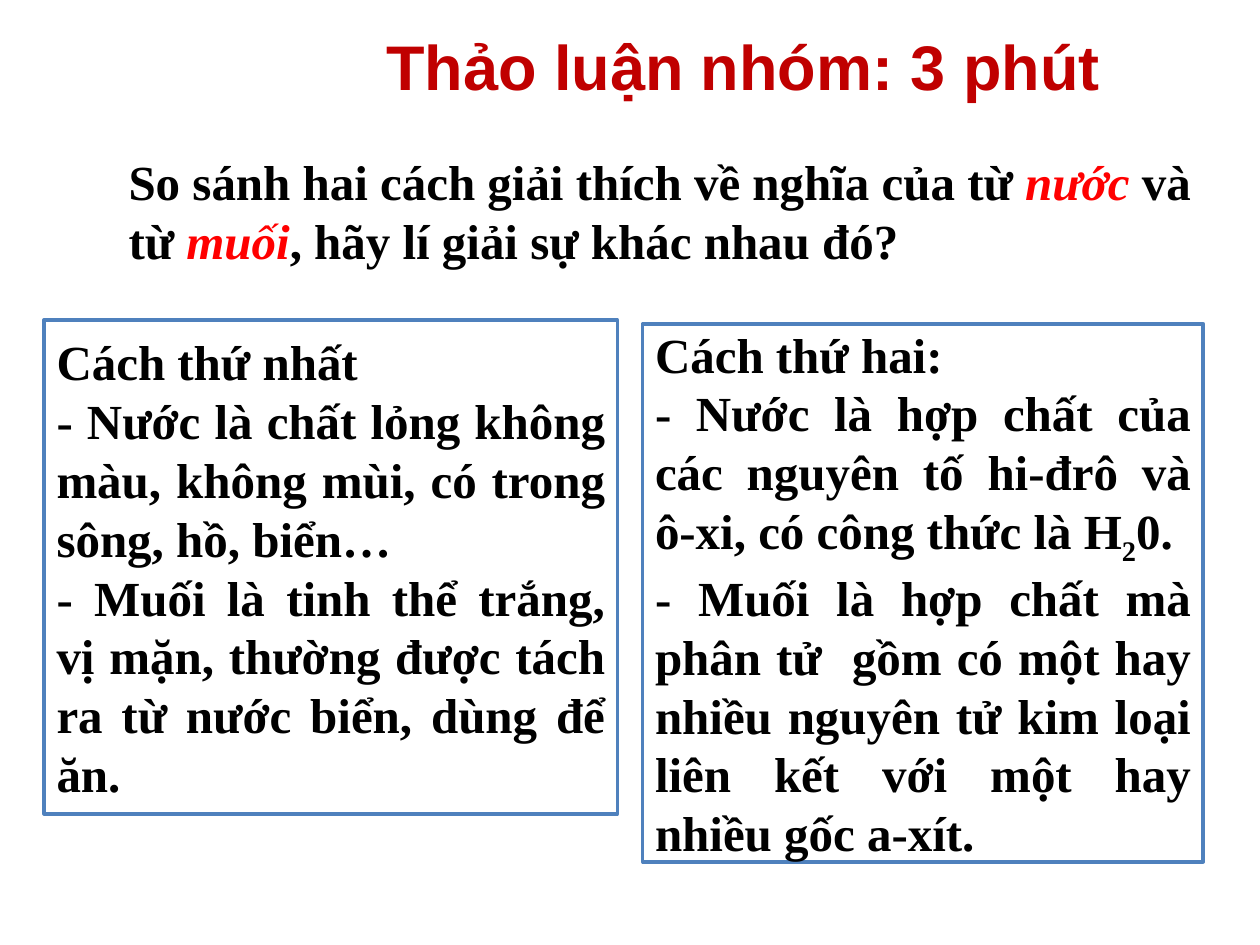
from lxml.etree import SubElement
from pptx import Presentation
from pptx.dml.color import RGBColor
from pptx.enum.shapes import MSO_SHAPE
from pptx.enum.text import MSO_ANCHOR, MSO_AUTO_SIZE, PP_ALIGN
from pptx.oxml.ns import qn
from pptx.util import Inches, Pt

BLACK = RGBColor(0x00, 0x00, 0x00)
WHITE = RGBColor(0xFF, 0xFF, 0xFF)
RED = RGBColor(0xFF, 0x00, 0x00)
DARK_RED = RGBColor(0xC0, 0x00, 0x00)
BLUE = RGBColor(0x4F, 0x81, 0xBD)
PALE_GREY = RGBColor(0xEA, 0xEA, 0xEA)

QUESTION = [
    ("So sánh hai cách giải thích về nghĩa của từ ", {}),
    ("nước", {"color": RED, "italic": True}),
    (" và từ ", {}),
    ("muối", {"color": RED, "italic": True}),
    (", hãy lí giải sự khác nhau đó?", {}),
]
FIRST_WAY = [
    [("Cách thứ nhất", {})],
    [("- Nước là chất lỏng không màu, không mùi, có trong sông, hồ, biển…", {})],
    [("- Muối là tinh thể trắng, vị mặn, thường được tách ra từ nước biển, "
      "dùng để ăn.", {})],
]
SECOND_WAY = [
    [("Cách thứ hai:", {})],
    [("- Nước là hợp chất của các nguyên tố hi-đrô và ô-xi, có công thức là H", {}),
     ("2", {"baseline": -25}),
     ("0.", {})],
    [("- Muối là hợp chất mà phân tử  gồm có một hay nhiều nguyên tử kim loại "
      "liên kết với một hay nhiều gốc a-xít.", {})],
]


def add_span(para, text, font="Times New Roman", size=28, color=BLACK,
             italic=False, baseline=0, outline=None):
    """Add bold text; baseline is a percentage, negative for a subscript."""
    span = para.add_run()
    span.text = text
    span.font.name = font
    span.font.size = Pt(size)
    span.font.bold = True
    span.font.italic = italic
    span.font.color.rgb = color
    properties = span.font._element
    if baseline:
        properties.set("baseline", str(baseline * 1000))
    if outline is not None:
        line = SubElement(properties, qn("a:ln"), w=str(Pt(1)))
        fill = SubElement(line, qn("a:solidFill"))
        SubElement(fill, qn("a:srgbClr"), val=str(outline))
        properties.insert(0, line)


def place(shape, left, top, width, height):
    shape.left, shape.top = Inches(left), Inches(top)
    shape.width, shape.height = Inches(width), Inches(height)


def fill_title(title):
    place(title, 2.7, 0.17, 6.4, 1.17)
    frame = title.text_frame
    frame.auto_size = MSO_AUTO_SIZE.NONE
    frame.vertical_anchor = MSO_ANCHOR.TOP
    para = frame.paragraphs[0]
    para.alignment = PP_ALIGN.CENTER
    add_span(para, "Thảo luận nhóm: 3 phút", font="Arial", size=36,
             color=DARK_RED, outline=PALE_GREY)


def fill_question(body):
    place(body, 0.23, 1.15, 9.33, 4.42)
    body.text_frame.auto_size = MSO_AUTO_SIZE.NONE
    para = body.text_frame.paragraphs[0]
    para.level = 2
    properties = para._p.get_or_add_pPr()
    properties.set("marL", str(Inches(0.69)))
    properties.set("indent", "0")
    SubElement(properties, qn("a:buNone"))
    for text, style in QUESTION:
        add_span(para, text, **style)


def add_answer_box(page, left, top, width, height, answer):
    """Add a framed box with a heading line above justified paragraphs."""
    box = page.shapes.add_shape(MSO_SHAPE.RECTANGLE, Inches(left), Inches(top),
                                Inches(width), Inches(height))
    box.shadow.inherit = False
    box.fill.solid()
    box.fill.fore_color.rgb = WHITE
    box.line.color.rgb = BLUE
    box.line.width = Pt(2)
    frame = box.text_frame
    frame.word_wrap = True
    frame.vertical_anchor = MSO_ANCHOR.MIDDLE
    for index, spans in enumerate(answer):
        para = frame.add_paragraph() if index else frame.paragraphs[0]
        para.alignment = PP_ALIGN.JUSTIFY if index else PP_ALIGN.LEFT
        for text, style in spans:
            add_span(para, text, **style)


def main():
    deck = Presentation()
    deck.slide_width, deck.slide_height = Inches(10), Inches(7.5)
    page = deck.slides.add_slide(deck.slide_layouts[1])
    fill_title(page.shapes.title)
    fill_question(page.placeholders[1])
    add_answer_box(page, 0.35, 2.54, 4.55, 3.92, FIRST_WAY)
    add_answer_box(page, 5.1, 2.57, 4.45, 4.27, SECOND_WAY)
    deck.save("out.pptx")


if __name__ == "__main__":
    main()
